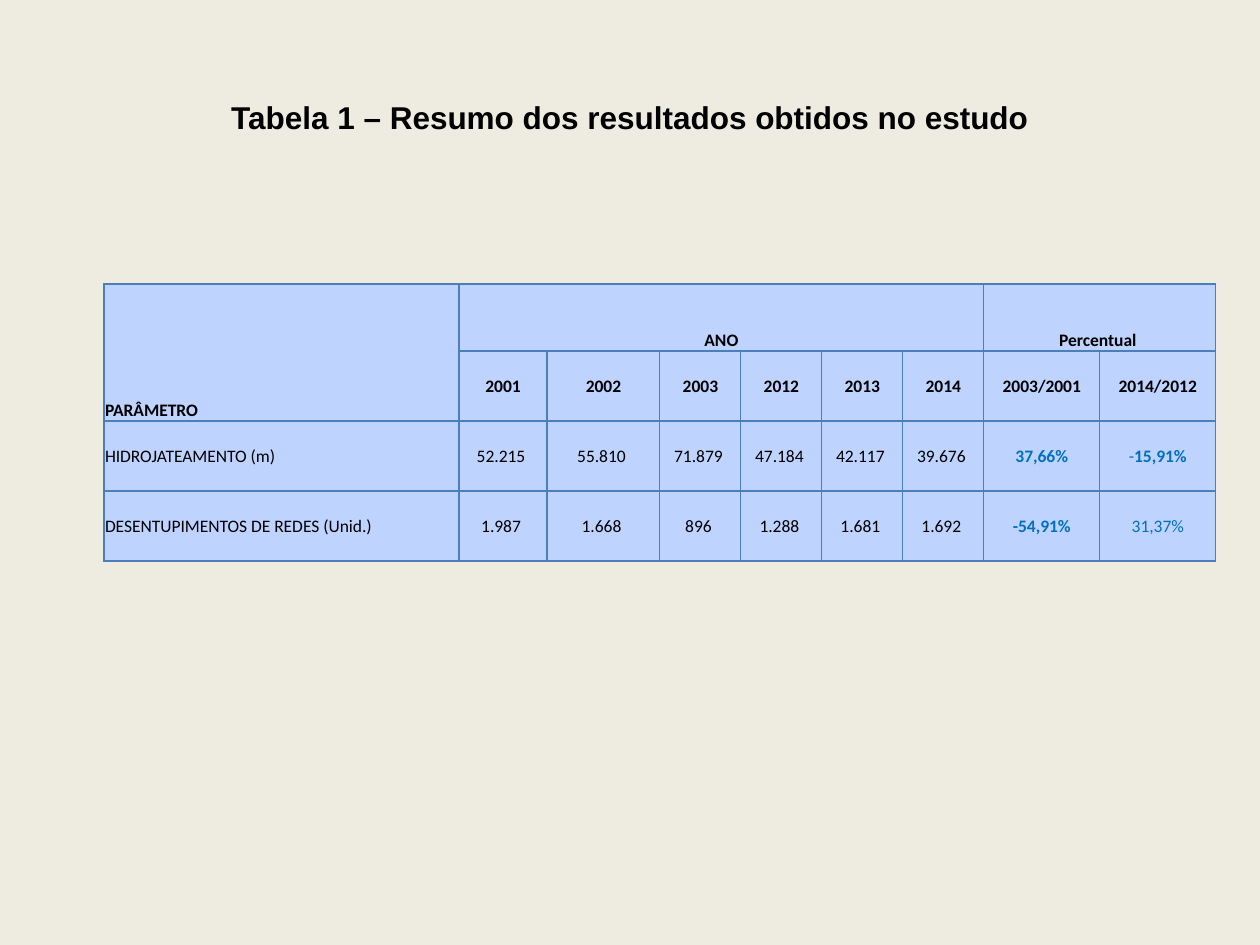
from dataclasses import dataclass

from lxml.etree import SubElement
from pptx import Presentation
from pptx.dml.color import RGBColor
from pptx.enum.text import MSO_ANCHOR as Anchor, PP_ALIGN as Align
from pptx.oxml.ns import qn
from pptx.util import Emu, Pt

EMU_PER_PX = 914400 / 126


def px(length):
    return Emu(round(length * EMU_PER_PX))


@dataclass(frozen=True)
class Theme:
    paper: str = "EEECE1"
    cell: str = "BFD3FF"
    border: str = "4B7EBC"
    ink: str = "000000"
    accent: str = "0070C0"
    title_font: str = "Arial"
    table_font: str = "Calibri"
    title_size: int = 18
    table_size: int = 10
    border_width: float = 0.75


class SlideBuilder:
    def __init__(self, slide, theme):
        self.slide = slide
        self.theme = theme
        background = slide.background.fill
        background.solid()
        background.fore_color.rgb = RGBColor.from_string(theme.paper)

    def style(self, font, name, size, color, bold=None):
        font.name = name
        font.size = Pt(size)
        font.color.rgb = RGBColor.from_string(color)
        font.bold = bold

    def title(self, text, left, top, width, height):
        heading = self.slide.shapes.title
        heading.left, heading.top = px(left), px(top)
        heading.width, heading.height = px(width), px(height)
        heading.text_frame.text = text
        heading.text_frame.vertical_anchor = Anchor.MIDDLE
        paragraph = heading.text_frame.paragraphs[0]
        paragraph.alignment = Align.CENTER
        self.style(paragraph.font, self.theme.title_font, self.theme.title_size, self.theme.ink, True)

    def table(self, left, top, widths, heights):
        frame = self.slide.shapes.add_table(
            len(heights), len(widths), px(left), px(top), px(sum(widths)), px(sum(heights))
        )
        table = frame.table
        table.first_row = table.horz_banding = False
        for column, width in zip(table.columns, widths):
            column.width = px(width)
        for row, height in zip(table.rows, heights):
            row.height = px(height)
        for cell in table.iter_cells():
            self.cell_box(cell)
        return table

    def cell_box(self, cell):
        properties = cell._tc.get_or_add_tcPr()
        for side in ("a:lnL", "a:lnR", "a:lnT", "a:lnB"):
            line = SubElement(properties, qn(side), w=str(Pt(self.theme.border_width)))
            SubElement(SubElement(line, qn("a:solidFill")), qn("a:srgbClr"), val=self.theme.border)
        cell.fill.solid()
        cell.fill.fore_color.rgb = RGBColor.from_string(self.theme.cell)
        cell.margin_left = cell.margin_right = cell.margin_top = px(1)
        cell.margin_bottom = 0

    def cell_text(self, cell, runs, color, align, anchor):
        cell.vertical_anchor = anchor
        paragraph = cell.text_frame.paragraphs[0]
        paragraph.alignment = align
        weights = {bold for _, bold in runs}
        shared = weights.pop() if len(weights) == 1 else None
        self.style(paragraph.font, self.theme.table_font, self.theme.table_size, color, shared)
        for text, bold in runs:
            run = paragraph.add_run()
            run.text = text
            if shared is None:
                run.font.bold = bold


YEARS = ["2001", "2002", "2003", "2012", "2013", "2014"]
COMPARISONS = ["2003/2001", "2014/2012"]
FIRST_COMPARISON = 1 + len(YEARS)
HEADERS = {
    (0, 0): ("PARÂMETRO", (1, 0)),
    (0, 1): ("ANO", (0, len(YEARS))),
    (0, FIRST_COMPARISON): ("Percentual ", (0, FIRST_COMPARISON + 1)),
}
RESULTS = [
    (
        "HIDROJATEAMENTO (m)",
        ["52.215 ", "55.810 ", "71.879 ", "47.184 ", "42.117 ", "39.676 "],
        [[("37,66%", True)], [("-", False), ("15,91%", True)]],
    ),
    (
        "DESENTUPIMENTOS DE REDES (Unid.)",
        ["1.987 ", "1.668 ", "896 ", "1.288 ", "1.681 ", "1.692 "],
        [[("-54,91%", True)], [("31,37%", False)]],
    ),
]


def main():
    deck = Presentation()
    deck.slide_width, deck.slide_height = px(1260), px(945)
    theme = Theme()
    builder = SlideBuilder(deck.slides.add_slide(deck.slide_layouts[5]), theme)
    builder.title("Tabela 1 – Resumo dos resultados obtidos no estudo", 63, 38, 1134, 158)

    widths = [355, 88, 113] + [81] * 4 + [116] * 2
    summary = builder.table(104, 284, widths, [67] + [70] * 3)

    for (row, column), (label, last) in HEADERS.items():
        cell = summary.cell(row, column)
        cell.merge(summary.cell(*last))
        align = Align.CENTER if column else Align.LEFT
        builder.cell_text(cell, [(label, True)], theme.ink, align, Anchor.BOTTOM)

    for column, period in enumerate(YEARS + COMPARISONS, 1):
        builder.cell_text(summary.cell(1, column), [(period, True)], theme.ink, Align.CENTER, Anchor.MIDDLE)

    for row, (parameter, totals, changes) in enumerate(RESULTS, 2):
        entries = [[(text, False)] for text in [parameter] + totals] + changes
        for column, runs in enumerate(entries):
            color = theme.accent if column >= FIRST_COMPARISON else theme.ink
            align = Align.CENTER if column else Align.LEFT
            builder.cell_text(summary.cell(row, column), runs, color, align, Anchor.MIDDLE)

    deck.save("out.pptx")


if __name__ == "__main__":
    main()
